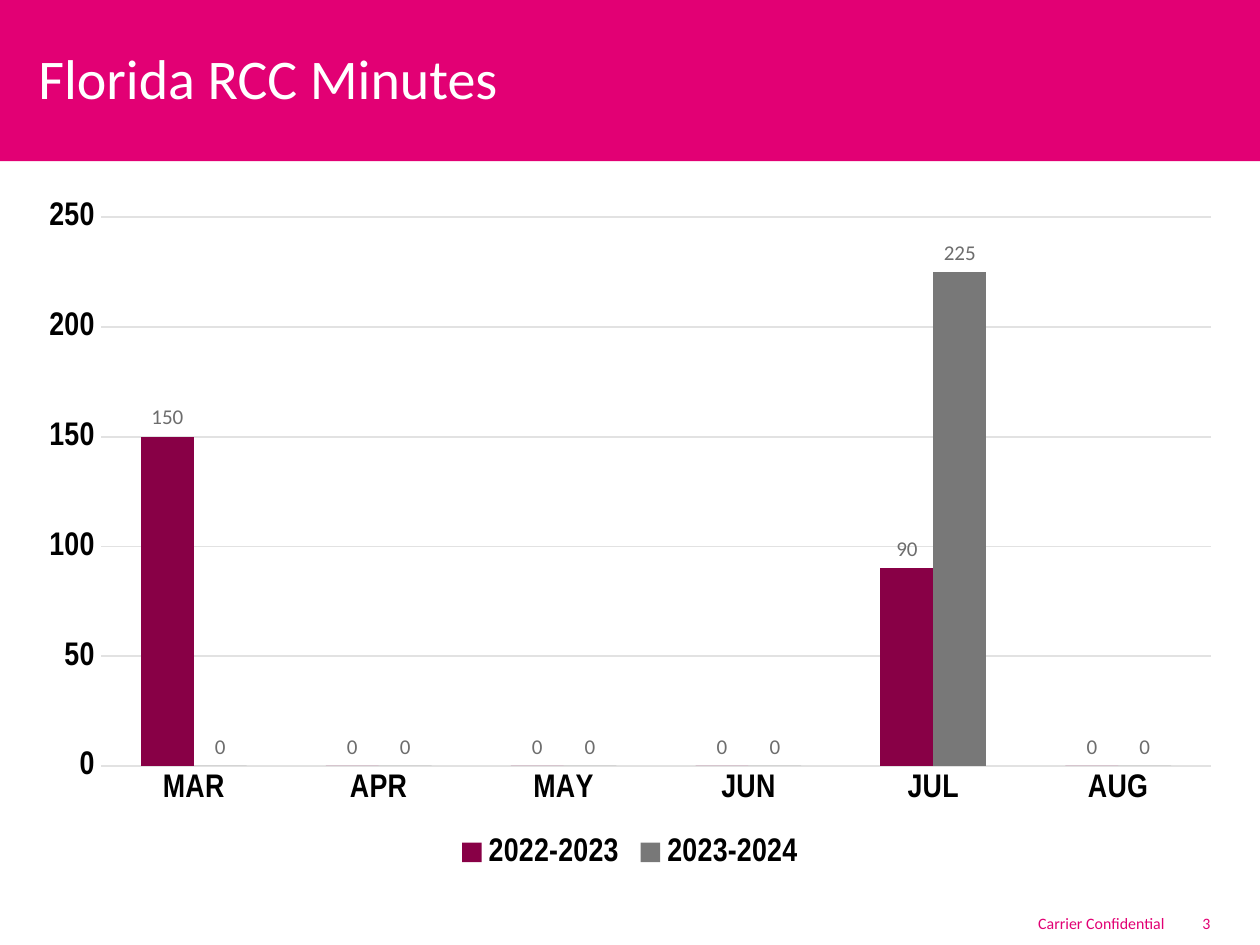
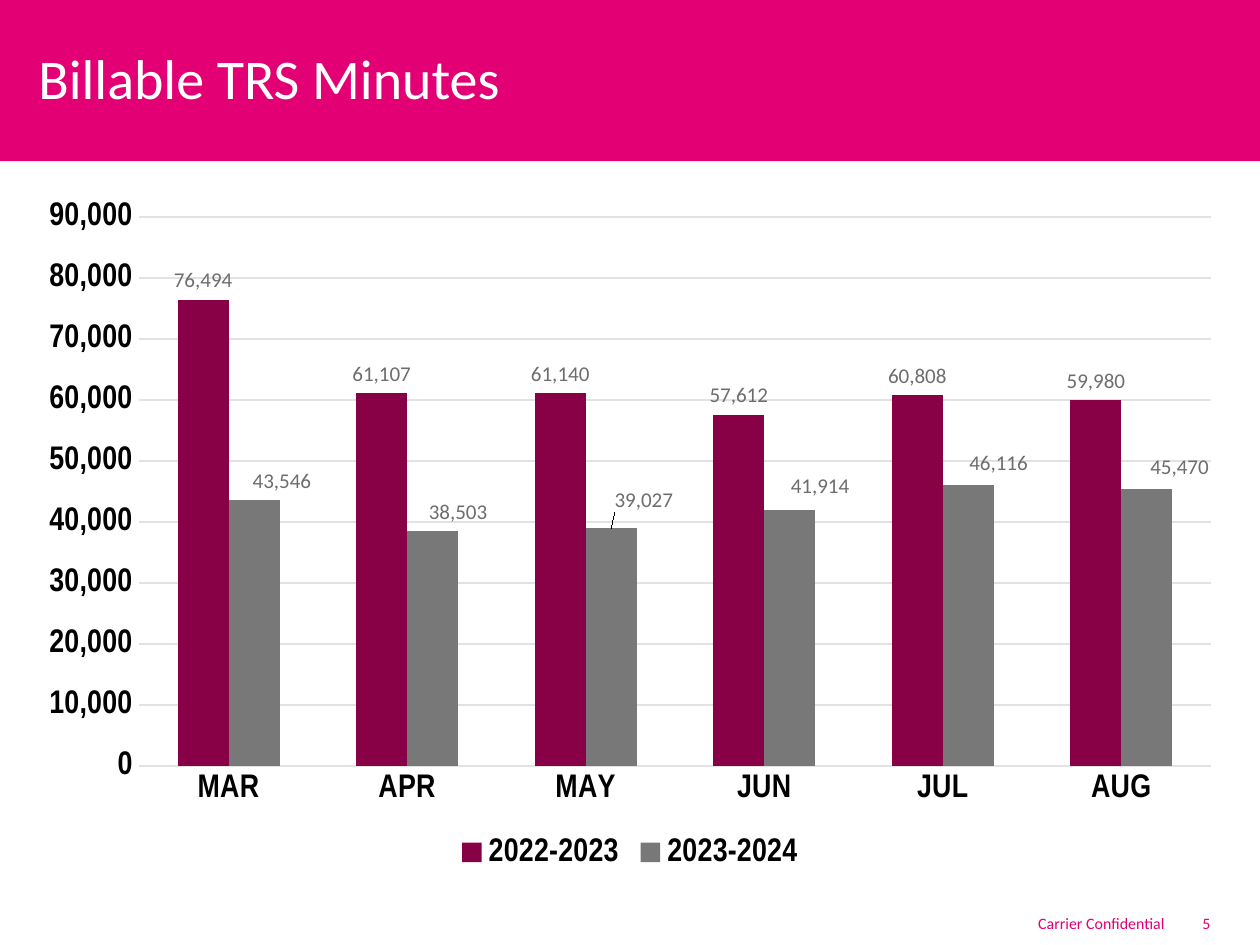
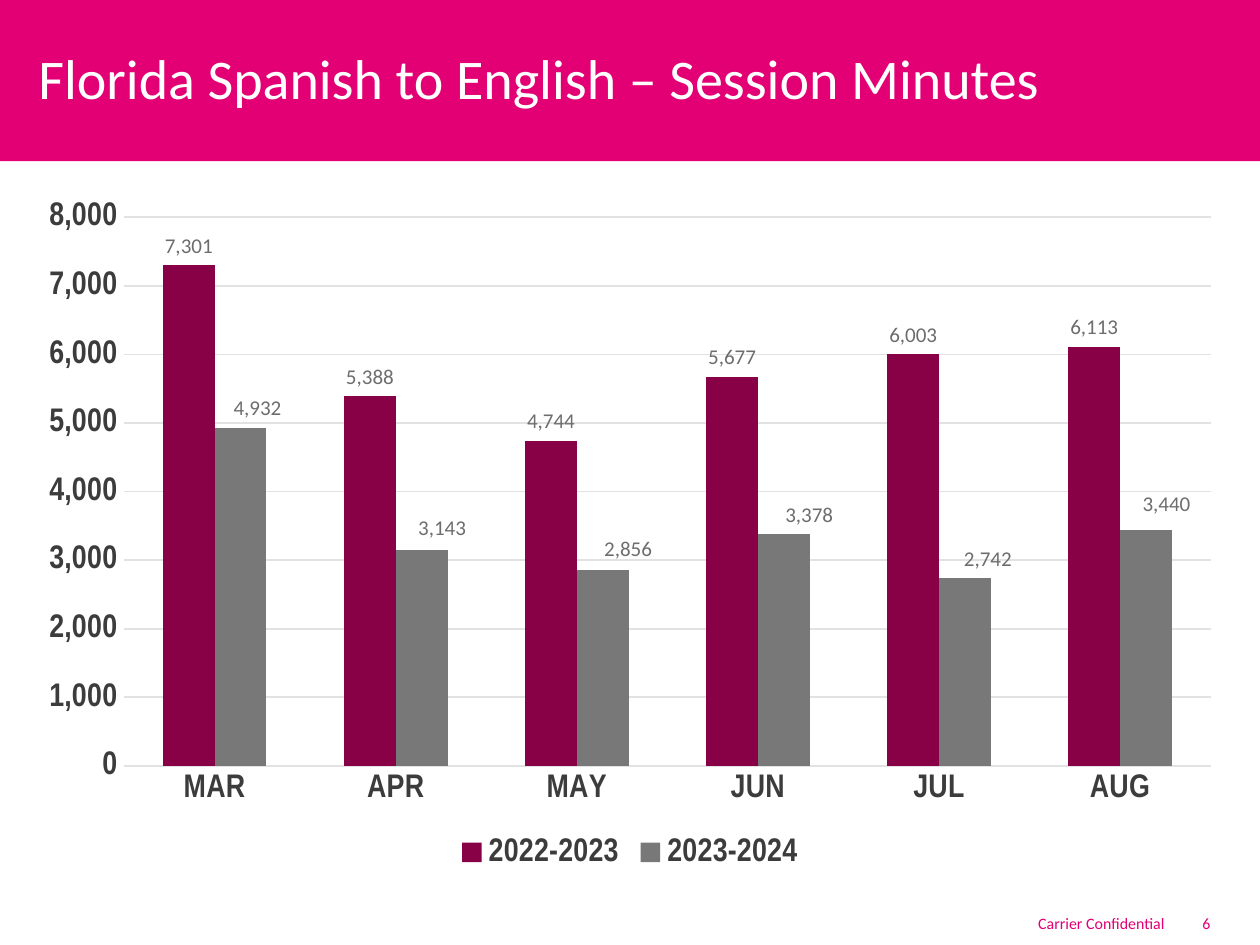
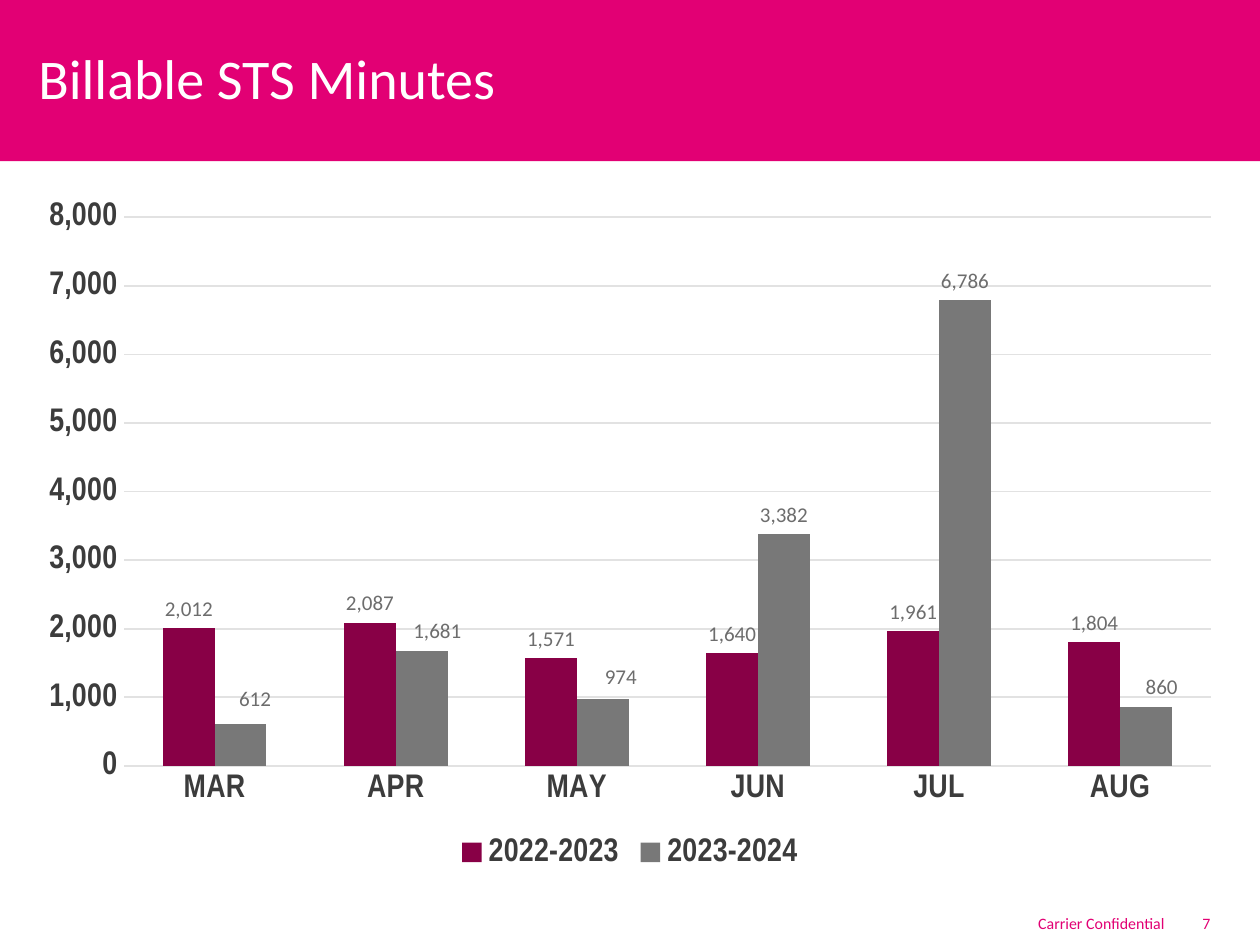
"""Build four slides of monthly relay minutes, each with a clustered column chart."""
from lxml import etree
from pptx import Presentation
from pptx.chart.data import CategoryChartData
from pptx.dml.color import RGBColor
from pptx.enum.chart import XL_CHART_TYPE, XL_LABEL_POSITION, XL_LEGEND_POSITION, XL_TICK_MARK
from pptx.enum.shapes import MSO_SHAPE
from pptx.enum.text import MSO_ANCHOR, MSO_AUTO_SIZE, PP_ALIGN
from pptx.oxml.ns import qn
from pptx.util import Cm, Pt

COLUMNS = XL_CHART_TYPE.COLUMN_CLUSTERED
OUTSIDE = XL_LABEL_POSITION.OUTSIDE_END
BOTTOM = XL_LEGEND_POSITION.BOTTOM
NO_TICK = XL_TICK_MARK.NONE
RECTANGLE = MSO_SHAPE.RECTANGLE
MIDDLE = MSO_ANCHOR.MIDDLE
FIXED = MSO_AUTO_SIZE.NONE
LEFT, RIGHT = PP_ALIGN.LEFT, PP_ALIGN.RIGHT

COLORS = {
    "brand": "E20074",
    "white": "FFFFFF",
    "black": "000000",
    "dark": "3C3C3C",
    "grid": "E2E2E2",
    "label": "6D6D6D",
    "previous": "880046",
    "current": "787878",
}
BODY_FONT, AXIS_FONT = "Calibri", "Arial Narrow"
THOUSANDS = "#,##0"
RED_NEGATIVES = "#,##0;[Red]#,##0"
CONFIDENTIAL = "Carrier Confidential"
MONTHS = ["MAR", "APR", "MAY", "JUN", "JUL", "AUG"]
YEARS = {"2022-2023": "previous", "2023-2024": "current"}

REPORTS = [
    {
        "number": 3, "title": "Florida RCC Minutes", "axis_color": "black", "axis_format": THOUSANDS,
        "minutes": [[150, 0, 0, 0, 90, 0], [0, 0, 0, 0, 225, 0]],
        "label_shifts": {},
    },
    {
        "number": 5, "title": "Billable TRS Minutes", "axis_color": "black", "axis_format": RED_NEGATIVES,
        "minutes": [[76494, 61107, 61140, 57612, 60808, 59980],
                    [43546, 38503, 39027, 41914, 46116, 45470]],
        "label_shifts": {0: (2.3, 0), 1: (2.1, 0), 2: (2.7, -1.3),
                         3: (2.5, -0.7), 4: (2.5, -0.3), 5: (2.7, -0.4)},
    },
    {
        "number": 6, "title": "Florida Spanish to English – Session Minutes",
        "axis_color": "dark", "axis_format": THOUSANDS,
        "minutes": [[7301, 5388, 4744, 5677, 6003, 6113],
                    [4932, 3143, 2856, 3378, 2742, 3440]],
        "label_shifts": {0: (1.4, 0), 1: (1.7, -0.4), 2: (2.1, -0.3),
                         3: (2.1, 0), 4: (1.9, 0), 5: (1.7, -1)},
    },
    {
        "number": 7, "title": "Billable STS Minutes", "axis_color": "dark", "axis_format": THOUSANDS,
        "minutes": [[2012, 2087, 1571, 1640, 1961, 1804],
                    [612, 1681, 974, 3382, 6786, 860]],
        "label_shifts": {0: (1.2, -0.9), 1: (1.3, 0), 2: (1.5, -0.4), 5: (1.3, -0.1)},
    },
]


def rgb(name):
    """Return the named palette colour."""
    return RGBColor.from_string(COLORS[name])


def style_font(font, size, color, name=BODY_FONT, bold=False):
    """Set the face, size, weight and colour of a font."""
    font.name, font.size, font.bold = name, Pt(size), bold
    font.color.rgb = rgb(color)


class MinutesDeck:
    """Hold the shared style and the current slide."""

    def __init__(self):
        """Open an empty presentation of the right size."""
        self.presentation = Presentation()
        self.presentation.slide_width = Cm(19.05)
        self.presentation.slide_height = Cm(14.29)
        self.slide = None

    def text_line(self, frame, text, size, color, align, insets):
        """Put one formatted line in a text frame."""
        frame.word_wrap = True
        frame.auto_size = FIXED
        frame.vertical_anchor = MIDDLE
        frame.margin_left = frame.margin_right = Cm(insets[0])
        frame.margin_top = frame.margin_bottom = Cm(insets[1])
        line = frame.paragraphs[0]
        line.alignment = align
        run = line.add_run()
        run.text = text
        style_font(run.font, size, color)

    def start_slide(self, title, number):
        """Add a slide with its band, title and footer."""
        self.slide = self.presentation.slides.add_slide(self.presentation.slide_layouts[5])
        self.band_with_title(title)
        self.footer(CONFIDENTIAL, 11.71, 6.05, RIGHT)
        self.footer(str(number), 18.03, 0.97, LEFT)

    def band_with_title(self, text):
        """Draw the top band and set the title over it."""
        band = self.slide.shapes.add_shape(RECTANGLE, 0, 0, self.presentation.slide_width, Cm(2.44))
        band.shadow.inherit = False
        band.fill.solid()
        band.fill.fore_color.rgb = rgb("brand")
        band.line.fill.background()
        title = self.slide.shapes.title
        band.element.addnext(title.element)
        title.left, title.top = Cm(0.38), Cm(0.41)
        title.width, title.height = Cm(18.39), Cm(1.52)
        self.text_line(title.text_frame, text, 24, "white", LEFT, (0.2, 0.1))

    def footer(self, text, left, width, align):
        """Add one piece of the footer line."""
        box = self.slide.shapes.add_textbox(Cm(left), Cm(13.74), Cm(width), Cm(0.43))
        self.text_line(box.text_frame, text, 6.8, "brand", align, (0.15, 0.08))

    def column_chart(self, minutes, axis_color, axis_format, label_shifts):
        """Add the chart that compares two years month by month."""
        data = CategoryChartData(number_format=THOUSANDS)
        data.categories = MONTHS
        for year, values in zip(YEARS, minutes):
            data.add_series(year, values)
        chart = self.slide.shapes.add_chart(
            COLUMNS, Cm(0.38), Cm(2.84), Cm(18.29), Cm(10.39), data).chart
        style_font(chart.font, 10, "dark")
        chart.has_title = False
        chart.has_legend = True
        chart.legend.position = BOTTOM
        chart.legend.include_in_layout = False
        style_font(chart.legend.font, 14, axis_color, AXIS_FONT, True)
        for axis in (chart.category_axis, chart.value_axis):
            axis.major_tick_mark = axis.minor_tick_mark = NO_TICK
            axis.format.line.fill.background()
            style_font(axis.tick_labels.font, 14, axis_color, AXIS_FONT, True)
        chart.value_axis.tick_labels.number_format = axis_format
        chart.value_axis.tick_labels.number_format_is_linked = False
        grid = chart.value_axis.major_gridlines.format.line
        grid.color.rgb, grid.width = rgb("grid"), Pt(0.75)
        plot = chart.plots[0]
        plot.gap_width, plot.overlap = 150, 0
        plot.vary_by_categories = False
        for series, color in zip(plot.series, YEARS.values()):
            series.format.fill.solid()
            series.format.fill.fore_color.rgb = rgb(color)
            series.invert_if_negative = False
            labels = series.data_labels
            labels.show_value = True
            labels.number_format, labels.number_format_is_linked = THOUSANDS, False
            labels.position = OUTSIDE
            style_font(labels.font, 9, "label")
        self.shift_labels(chart, label_shifts)

    def shift_labels(self, chart, shifts):
        """Move current-year labels by percentages of the chart's width and height."""
        points = chart.plots[0].series[1].points
        for month in shifts:
            label = points[month].data_label
            style_font(label.font, 9, "label")
            label.position = OUTSIDE
        for label, shift in zip(chart.element.iter(qn("c:dLbl")), shifts.values()):
            layout = etree.Element(qn("c:layout"))
            manual = etree.SubElement(layout, qn("c:manualLayout"))
            for axis, percent in zip("xy", shift):
                etree.SubElement(manual, qn(f"c:{axis}")).set("val", f"{percent / 100:.3f}")
            label.find(qn("c:idx")).addnext(layout)

    def save(self):
        """Save the presentation."""
        self.presentation.save("out.pptx")


def main():
    """Build every report slide and save the deck."""
    deck = MinutesDeck()
    for report in REPORTS:
        deck.start_slide(report["title"], report["number"])
        deck.column_chart(report["minutes"], report["axis_color"],
                          report["axis_format"], report["label_shifts"])
    deck.save()


if __name__ == "__main__":
    main()
